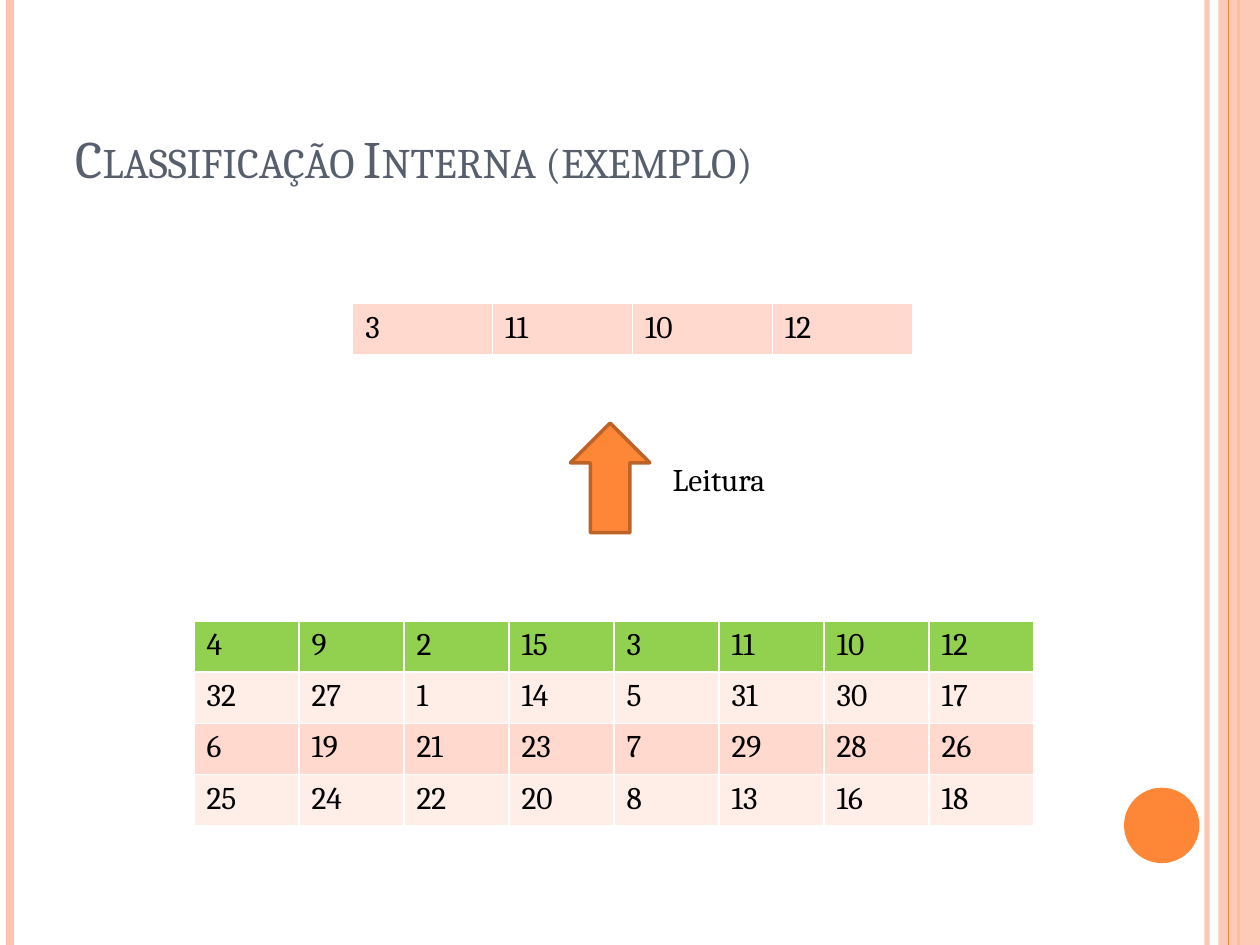
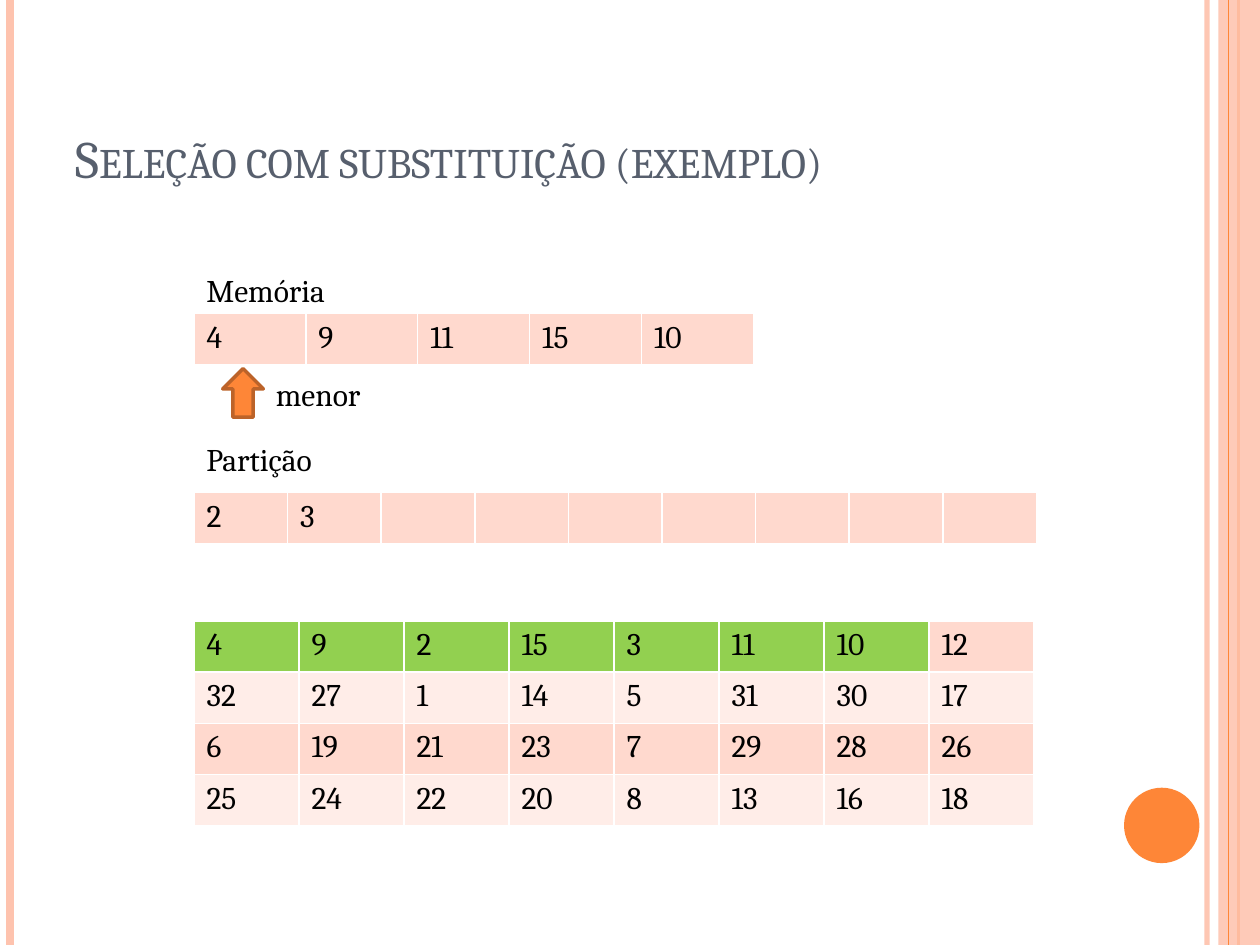
from lxml.etree import SubElement as Sub
from pptx import Presentation as Deck
from pptx.dml.color import RGBColor as Rgb
from pptx.enum.shapes import MSO_CONNECTOR as Conn, MSO_SHAPE as Kind
from pptx.enum.text import MSO_ANCHOR as Anchor
from pptx.oxml.ns import qn
from pptx.util import Cm, Pt

FONT = "Cambria"
BLACK, WHITE, SLATE = "000000", "FFFFFF", "575F6D"
ORANGE, RUST, PEACH = "FE8637", "BC6329", "FEC3AE"
GREEN, ROSE, BLUSH = "92D050", "FFD9CE", "FFEDE8"
WIDE, HIGH = 25.4, 19.05
ROW = 1.03
LEFT = 3.91
DISK = [
    [4, 9, 2, 15, 3, 11, 10, 12],
    [32, 27, 1, 14, 5, 31, 30, 17],
    [6, 19, 21, 23, 7, 29, 28, 26],
    [25, 24, 22, 20, 8, 13, 16, 18],
]


def tint(target, code):
    """Give a font or fill colour object the hex colour."""
    target.rgb = Rgb.from_string(code)


def paint(fill, code):
    """Make a fill solid in the hex colour."""
    fill.solid()
    tint(fill.fore_color, code)


def fade(shape, share):
    """Set the opacity, in percent, of the first colour of a shape."""
    color = next(shape._element.spPr.iter(qn("a:srgbClr")))
    Sub(color, qn("a:alpha")).set("val", str(share * 1000))


def write(frame, text, size=18, code=BLACK):
    """Add one run to the first paragraph and return it."""
    run = frame.paragraphs[0].add_run()
    run.text = str(text)
    run.font.name, run.font.size = FONT, Pt(size)
    tint(run.font.color, code)
    return run


def label(shapes, text, x, y, w, h=1.02):
    """Add a text box with one run and return its frame and run."""
    frame = shapes.add_textbox(Cm(x), Cm(y), Cm(w), Cm(h)).text_frame
    frame.word_wrap = True
    return frame, write(frame, text)


def solid(shapes, kind, code, x, y, w, h):
    """Add a flat preset shape without outline."""
    shape = shapes.add_shape(kind, Cm(x), Cm(y), Cm(w), Cm(h))
    shape.shadow.inherit = False
    paint(shape.fill, code)
    shape.line.fill.background()
    return shape


def stripe(shapes, x, width, code):
    """Draw a line down the full height of the slide."""
    line = shapes.add_connector(Conn.STRAIGHT, Cm(x), 0, Cm(x), Cm(HIGH))
    line.line.width = Pt(width)
    paint(line.line.fill, code)
    Sub(line._element.spPr, qn("a:effectLst"))
    return line


def frame_page(shapes):
    """Draw the side bands and the corner disc."""
    fade(stripe(shapes, 24.33, 3, PEACH), 93)
    stripe(shapes, 0.2, 4.5, PEACH)
    stripe(shapes, 24.97, 1.5, ORANGE)
    fade(solid(shapes, Kind.RECTANGLE, PEACH, 24.56, 0, WIDE - 24.56, HIGH), 87)
    stripe(shapes, 24.77, 0.75, ORANGE)
    solid(shapes, Kind.OVAL, ORANGE, 22.66, 15.88, 1.52, 1.52)


def start(deck, title):
    """Add a slide with its frame and title, and return its shapes."""
    shapes = deck.slides.add_slide(deck.slide_layouts[6]).shapes
    frame_page(shapes)
    frame, run = label(shapes, title, 1.27, 0.76, 20.75, 3.18)
    frame.vertical_anchor = Anchor.BOTTOM
    run.font.size = Pt(30)
    tint(run.font.color, SLATE)
    run._r.get_or_add_rPr().set("cap", "small")
    return shapes


def edge(cell):
    """Give a cell thin white borders."""
    props = cell._tc.get_or_add_tcPr()
    for side in ("lnL", "lnR", "lnT", "lnB"):
        line = Sub(props, qn(f"a:{side}"), w=str(Pt(1)))
        Sub(Sub(line, qn("a:solidFill")), qn("a:srgbClr"), val=WHITE)


def grid(shapes, rows, x, y, w, read=0):
    """Add a banded table whose first cells, as many as read, are green."""
    count = len(rows[0])
    table = shapes.add_table(len(rows), count, Cm(x), Cm(y), Cm(w),
                             Cm(ROW * len(rows))).table
    table.first_row = table.horz_banding = False
    for col in table.columns:
        col.width = Cm(w / count)
    for i, row in enumerate(rows):
        table.rows[i].height = Cm(ROW)
        for j, value in enumerate(row):
            cell = table.cell(i, j)
            edge(cell)
            done = i == 0 and j < read
            paint(cell.fill, GREEN if done else (ROSE, BLUSH)[i % 2])
            if value != "":
                write(cell.text_frame, value)


def disk(shapes, read):
    """Add the table of input values."""
    grid(shapes, DISK, LEFT, 12.52, 16.94, read)


def arrow(shapes, x, y, w, h):
    """Add an outlined arrow that points up."""
    shape = solid(shapes, Kind.UP_ARROW, ORANGE, x, y, w, h)
    paint(shape.line.fill, RUST)
    shape.line.width = Pt(2)


def sort_page(deck):
    """Build the slide on internal sorting."""
    shapes = start(deck, "Classificação Interna (exemplo)")
    disk(shapes, 8)
    grid(shapes, [[3, 11, 10, 12]], 7.11, 6.12, 11.28)
    arrow(shapes, 11.5, 8.53, 1.6, 2.21)
    label(shapes, "Leitura", 13.31, 9.14, 2.74)


def swap_page(deck):
    """Build the slide on selection with replacement."""
    shapes = start(deck, "Seleção com substituição (exemplo)")
    disk(shapes, 7)
    grid(shapes, [[4, 9, 11, 15, 10]], LEFT, 6.32, 11.28)
    grid(shapes, [[2, 3] + [""] * 7], LEFT, 9.93, 16.99)
    label(shapes, "Memória", LEFT, 5.33, 3.18)
    label(shapes, "Partição", LEFT, 8.74, 3)
    group = shapes.add_group_shape().shapes
    arrow(group, 4.49, 7.43, 0.82, 0.98)
    label(group, "menor", 5.31, 7.44, 2.79)


def main():
    """Build and save the deck."""
    deck = Deck()
    deck.slide_width, deck.slide_height = Cm(WIDE), Cm(HIGH)
    sort_page(deck)
    swap_page(deck)
    deck.save("out.pptx")


if __name__ == "__main__":
    main()
